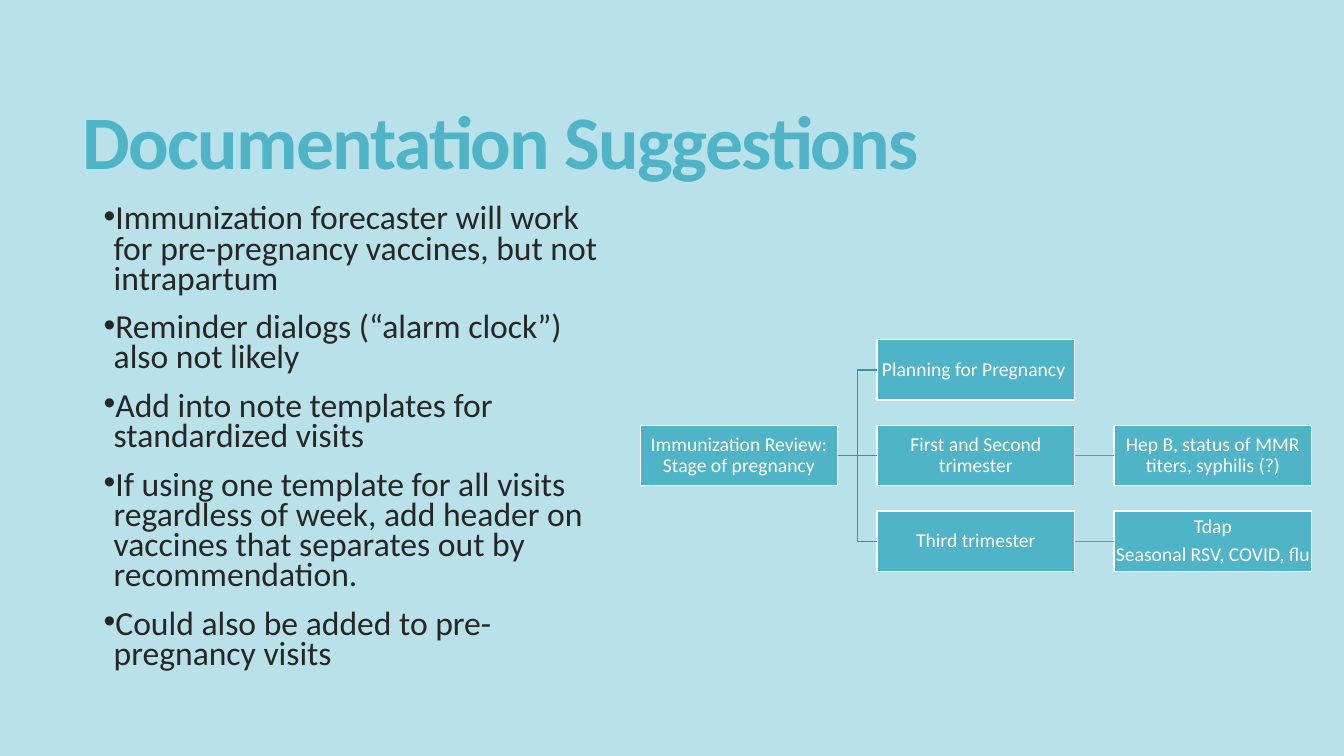
import lxml.etree
import pptx
import pptx.dml.color
import pptx.enum.shapes
import pptx.enum.text
import pptx.oxml.ns
import pptx.util

Inches = pptx.util.Inches
Pt = pptx.util.Pt
qn = pptx.oxml.ns.qn
PP_ALIGN = pptx.enum.text.PP_ALIGN
MSO_ANCHOR = pptx.enum.text.MSO_ANCHOR
CONNECTOR = pptx.enum.shapes.MSO_CONNECTOR

FONT = "Calibri"
COLORS = {
    "background": "B9E1E9",
    "accent": "50B4C8",
    "body": "262626",
    "white": "FFFFFF",
    "first_link": "4090A0",
    "second_link": "49A3B6",
}

SUGGESTIONS = [
    "Immunization forecaster will work for pre-pregnancy vaccines, but not intrapartum",
    "Reminder dialogs (“alarm clock”) also not likely",
    "Add into note templates for standardized visits",
    "If using one template for all visits regardless of week, add header on vaccines "
    "that separates out by recommendation.",
    "Could also be added to pre-pregnancy visits",
]

# Box name: (column, row, paragraphs)
STAGES = {
    "review": (0, 1, ["Immunization Review: Stage of pregnancy"]),
    "planning": (1, 0, ["Planning for Pregnancy "]),
    "early": (1, 1, ["First and Second trimester"]),
    "early_vaccines": (2, 1, ["Hep B, status of MMR titers, syphilis (?)"]),
    "third": (1, 2, ["Third trimester"]),
    "third_vaccines": (2, 2, ["Tdap", "Seasonal RSV, COVID, flu"]),
}
LINKS = [
    ("review", "planning", "first_link"),
    ("review", "early", "first_link"),
    ("review", "third", "first_link"),
    ("early", "early_vaccines", "second_link"),
    ("third", "third_vaccines", "second_link"),
]


def rgb(name):
    return pptx.dml.color.RGBColor.from_string(COLORS[name])


def write_paragraphs(text_frame, texts, size, color, line_spacing, bold=False):
    """Fill the frame with one run per paragraph and return the paragraphs."""
    text_frame.word_wrap = True
    for index, text in enumerate(texts):
        paragraph = text_frame.add_paragraph() if index else text_frame.paragraphs[0]
        paragraph.line_spacing = line_spacing
        run = paragraph.add_run()
        run.text = text
        run.font.name = FONT
        run.font.size = Pt(size)
        run.font.bold = bold
        run.font.color.rgb = rgb(color)
    return text_frame.paragraphs


def add_title(slide, text):
    box = slide.shapes.add_textbox(Inches(0.72), Inches(0.55), Inches(11.78), Inches(1.81))
    box.text_frame.vertical_anchor = MSO_ANCHOR.MIDDLE
    paragraphs = write_paragraphs(box.text_frame, [text], 54, "accent", 0.85, bold=True)
    paragraphs[0].runs[0].font._element.set("spc", "-120")


def add_bullet_list(slide, texts):
    box = slide.shapes.add_textbox(Inches(0.93), Inches(1.99), Inches(5.2), Inches(4.98))
    for paragraph in write_paragraphs(box.text_frame, texts, 24, "body", 0.75):
        paragraph.space_before = Pt(13)
        properties = paragraph._p.get_or_add_pPr()
        properties.set("marL", str(Inches(0.1)))
        properties.set("indent", str(Inches(-0.1)))
        lxml.etree.SubElement(properties, qn("a:buFont")).set("typeface", "Arial")
        lxml.etree.SubElement(properties, qn("a:buChar")).set("char", "•")


def add_stage(slide, column, row, texts):
    shape = slide.shapes.add_shape(
        pptx.enum.shapes.MSO_SHAPE.RECTANGLE,
        Inches(6.35 + 2.35 * column), Inches(3.37 + 0.85 * row), Inches(1.96), Inches(0.6))
    shape.shadow.inherit = False
    shape.fill.solid()
    shape.fill.fore_color.rgb = rgb("accent")
    shape.line.color.rgb = rgb("white")
    shape.line.width = Pt(1)
    frame = shape.text_frame
    frame.vertical_anchor = MSO_ANCHOR.MIDDLE
    frame.margin_left = frame.margin_right = Inches(0.01)
    frame.margin_top = frame.margin_bottom = Inches(0.01)
    for paragraph in write_paragraphs(frame, texts, 14, "white", 0.9):
        paragraph.alignment = PP_ALIGN.CENTER
        paragraph.space_after = Pt(5)
    return shape


def add_link(slide, source, target, color):
    """Join the right side of one box to the left side of another."""
    kind = CONNECTOR.STRAIGHT if source.top == target.top else CONNECTOR.ELBOW
    connector = slide.shapes.add_connector(kind, 0, 0, 0, 0)
    connector.begin_connect(source, 3)
    connector.end_connect(target, 1)
    connector.line.color.rgb = rgb(color)
    connector.line.width = Pt(1)
    lxml.etree.SubElement(connector._element.spPr, qn("a:effectLst"))


def main():
    presentation = pptx.Presentation()
    presentation.slide_width = Inches(13.33)
    presentation.slide_height = Inches(7.5)
    slide = presentation.slides.add_slide(presentation.slide_layouts[6])
    slide.background.fill.solid()
    slide.background.fill.fore_color.rgb = rgb("background")

    add_title(slide, "Documentation Suggestions")
    add_bullet_list(slide, SUGGESTIONS)
    boxes = {name: add_stage(slide, *stage) for name, stage in STAGES.items()}
    for source, target, color in LINKS:
        add_link(slide, boxes[source], boxes[target], color)

    presentation.save("out.pptx")


if __name__ == "__main__":
    main()
